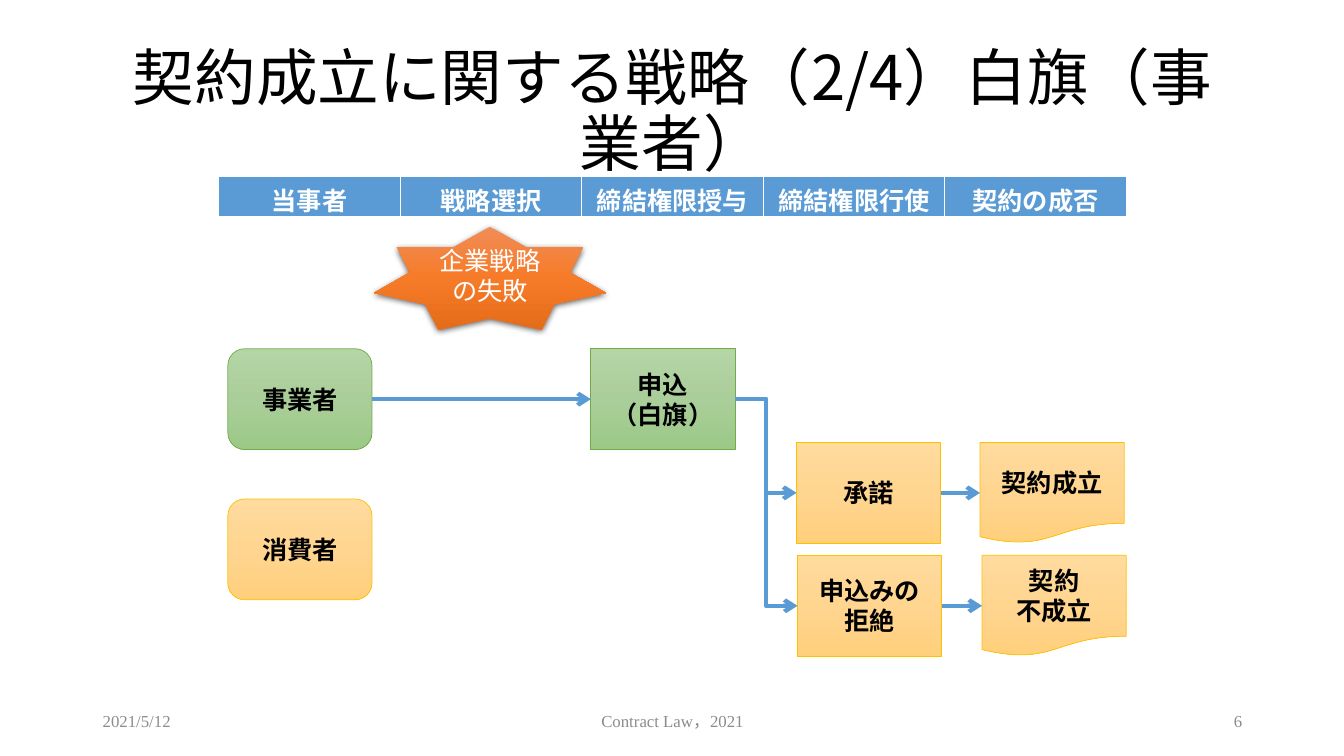
from copy import deepcopy

from pptx import Presentation
from pptx import util as u
from pptx.dml.color import RGBColor
from pptx.enum import shapes, text
from pptx.oxml import parse_xml
from pptx.oxml.ns import nsdecls, qn

BLACK = RGBColor(0x00, 0x00, 0x00)
WHITE = RGBColor(0xFF, 0xFF, 0xFF)
GREY = RGBColor(0x8C, 0x8C, 0x8C)
BLUE = RGBColor(0x5B, 0x9B, 0xD5)
GREEN_LINE = RGBColor(0x70, 0xAD, 0x47)
GOLD_LINE = RGBColor(0xFF, 0xC0, 0x00)
GREEN = [RGBColor(0xB5, 0xD5, 0xA7), RGBColor(0xAA, 0xCE, 0x9A), RGBColor(0x9C, 0xC9, 0x87)]
GOLD = [RGBColor(0xFF, 0xDB, 0x9E), RGBColor(0xFF, 0xD5, 0x90), RGBColor(0xFF, 0xD0, 0x7C)]
ORANGE = [RGBColor(0xF1, 0x8C, 0x57), RGBColor(0xF6, 0x7B, 0x28), RGBColor(0xE5, 0x6C, 0x19)]
SERIF = "Times New Roman"
GOTHIC = "Noto Sans CJK JP"
CENTER = text.PP_ALIGN.CENTER
KIND = shapes.MSO_SHAPE


def write(frame, words, color, align=CENTER, **font):
    """Fill a text frame, middle anchored, with one font format for every run."""
    frame.text = words
    frame.word_wrap = True
    frame.vertical_anchor = text.MSO_ANCHOR.MIDDLE
    look = {"name": SERIF, "size": u.Pt(18), "bold": False, **font}
    for para in frame.paragraphs:
        para.alignment = align
        for span in para.runs:
            for key, value in look.items():
                setattr(span.font, key, value)
            span.font.color.rgb = color
            latin = span._r.rPr.find(qn("a:latin"))
            latin.addnext(parse_xml(f'<a:ea {nsdecls("a")} typeface="{GOTHIC}"/>'))


def add_gradient_shape(kind, left, top, width, height, colors):
    """Add a shape shaded from top to bottom through three colours."""
    shape = page.shapes.add_shape(
        kind, u.Inches(left), u.Inches(top), u.Inches(width), u.Inches(height))
    shape.shadow.inherit = False
    shape.fill.gradient()
    shape.fill.gradient_angle = 270
    stops = shape._element.spPr.find(".//" + qn("a:gsLst"))
    stops.insert(1, deepcopy(stops[0]))
    for stop, color, position in zip(shape.fill.gradient_stops, colors, (0, 0.5, 1)):
        stop.color.rgb = color
        stop.position = position
    return shape


deck = Presentation()
deck.slide_width = u.Inches(13.33)
deck.slide_height = u.Inches(7.5)
page = deck.slides.add_slide(deck.slide_layouts[5])

# Title
title = page.shapes.title
title.left, title.top = u.Inches(0.92), u.Inches(0.4)
title.width, title.height = u.Inches(11.5), u.Inches(1.45)
write(title.text_frame, "契約成立に関する戦略（2/4）白旗（事業者）", BLACK, name=GOTHIC, size=u.Pt(44))
title.text_frame.auto_size = text.MSO_AUTO_SIZE.NONE
title.text_frame.paragraphs[0].line_spacing = 0.9

# Footer
for words, left, width, align in [
    ("2021/5/12", 0.92, 3, text.PP_ALIGN.LEFT),
    ("Contract Law，2021", 4.42, 4.5, CENTER),
    ("6", 9.42, 3, text.PP_ALIGN.RIGHT),
]:
    footer = page.shapes.add_textbox(
        u.Inches(left), u.Inches(6.95), u.Inches(width), u.Inches(0.4))
    write(footer.text_frame, words, GREY, align, size=u.Pt(12))

# Column headings
headings = ["当事者", "戦略選択", "締結権限授与", "締結権限行使", "契約の成否"]
table = page.shapes.add_table(
    1, len(headings), u.Inches(2.17), u.Inches(1.75), u.Inches(9), u.Inches(0.41)).table
for cell, heading in zip(table.rows[0].cells, headings):
    write(cell.text_frame, heading, WHITE, bold=True)
    cell.fill.solid()
    cell.fill.fore_color.rgb = BLUE
    for index, (side, points) in enumerate([("L", 1), ("R", 1), ("T", 1), ("B", 3)]):
        cell._tc.tcPr.insert(index, parse_xml(
            f'<a:ln{side} {nsdecls("a")} w="{u.Pt(points)}"><a:solidFill>'
            f'<a:srgbClr val="{WHITE}"/></a:solidFill></a:ln{side}>'))

# Parties, decisions and outcomes
boxes = {}
for name, words, kind, left, top, colors, line_color in [
    ("business", "事業者", KIND.ROUNDED_RECTANGLE, 2.26, 3.46, GREEN, GREEN_LINE),
    ("consumer", "消費者", KIND.ROUNDED_RECTANGLE, 2.26, 4.95, GOLD, GOLD_LINE),
    ("offer", "申込\v（白旗）", KIND.RECTANGLE, 5.86, 3.46, GREEN, GREEN_LINE),
    ("acceptance", "承諾", KIND.RECTANGLE, 7.9, 4.39, GOLD, GOLD_LINE),
    ("contract", "契約成立", KIND.FLOWCHART_DOCUMENT, 9.72, 4.39, GOLD, GOLD_LINE),
    ("refusal", "申込みの\n拒絶", KIND.RECTANGLE, 7.91, 5.51, GOLD, GOLD_LINE),
    ("no contract", "契約\v不成立", KIND.FLOWCHART_DOCUMENT, 9.74, 5.51, GOLD, GOLD_LINE),
]:
    box = add_gradient_shape(kind, left, top, 1.43, 1, colors)
    box.line.color.rgb = line_color
    box.line.width = u.Pt(0.5)
    write(box.text_frame, words, BLACK, bold=True)
    boxes[name] = box

# Failed strategy
star = add_gradient_shape(KIND.STAR_7_POINT, 3.71, 2.25, 2.3, 1.02, ORANGE)
star.line.fill.background()
write(star.text_frame, "企業戦略の失敗", WHITE)
star._element.spPr.find(qn("a:effectLst")).append(parse_xml(
    f'<a:outerShdw {nsdecls("a")} blurRad="{u.Pt(4.5)}" dist="{u.Pt(1.5)}" dir="5400000" '
    f'algn="ctr" rotWithShape="0"><a:srgbClr val="{BLACK}"><a:alpha val="63000"/>'
    '</a:srgbClr></a:outerShdw>'))

# Arrows
STRAIGHT, ELBOW = shapes.MSO_CONNECTOR.STRAIGHT, shapes.MSO_CONNECTOR.ELBOW
for start, end, kind in [
    ("business", "offer", STRAIGHT),
    ("offer", "acceptance", ELBOW),
    ("offer", "refusal", ELBOW),
    ("acceptance", "contract", STRAIGHT),
    ("refusal", "no contract", STRAIGHT),
]:
    arrow = page.shapes.add_connector(kind, 0, 0, 0, 0)
    arrow.begin_connect(boxes[start], 3)
    arrow.end_connect(boxes[end], 1)
    arrow.line.color.rgb = BLUE
    arrow.line.width = u.Pt(3)
    arrow.line._ln.append(parse_xml(f'<a:tailEnd {nsdecls("a")} type="arrow"/>'))
    arrow._element.spPr.append(parse_xml(f'<a:effectLst {nsdecls("a")}/>'))

deck.save("out.pptx")
